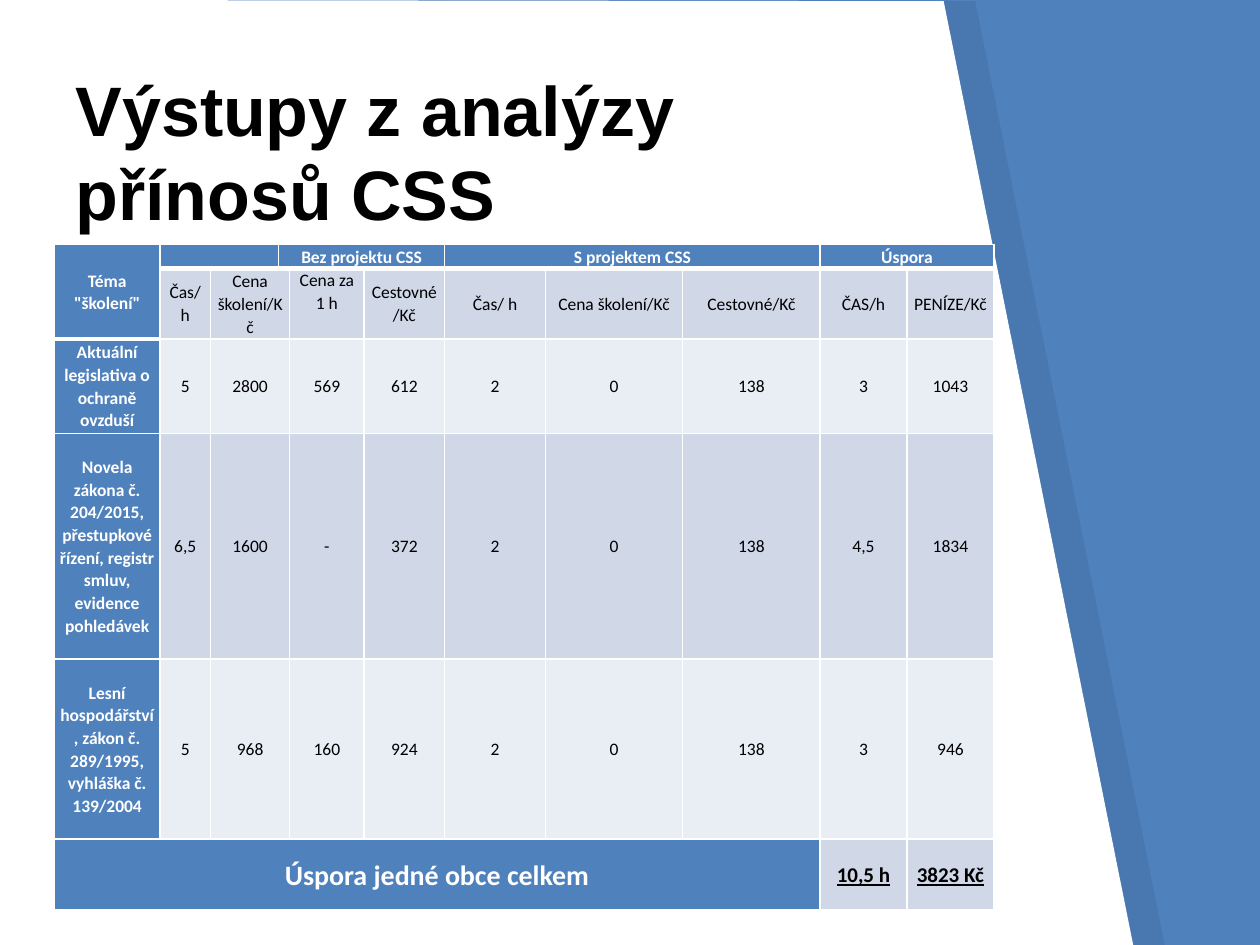
from lxml.etree import SubElement
from pptx import Presentation
from pptx.dml.color import RGBColor
from pptx.enum.text import MSO_ANCHOR, MSO_AUTO_SIZE, PP_ALIGN
from pptx.oxml.ns import qn
from pptx.util import Inches, Pt

HUES = {"blue": "4F81BD", "white": "FFFFFF", "black": "000000",
        "dark": "D0D8E8", "light": "E9EDF4"}
COLS = [0.84, 0.4, 0.54, 0.09, 0.59, 0.64, 0.8, 1.09, 1.09, 0.69, 0.69]
ROWS = [0.19, 0.56, 0.75, 1.79, 1.43, 0.56]
LAST = len(ROWS) - 1
SPANS = [(0, 0, 1, 0), (0, 1, 0, 2), (0, 3, 0, 5), (0, 6, 0, 8),
         (0, 9, 0, 10), (LAST, 0, LAST, 8)]
SPANS += [(row, 2, row, 3) for row in range(1, LAST)]
HEADS = {(0, 0): 'Téma "školení"', (0, 3): "Bez projektu CSS",
         (0, 6): "S projektem CSS", (0, 9): "Úspora",
         (LAST, 0): "Úspora jedné obce celkem",
         (LAST, 9): "10,5 h", (LAST, 10): "3823 Kč"}
FIELDS = [1, 2, 4, 5, 6, 7, 8, 9, 10]
BODY = [
    ["Čas/ h", "Cena školení/Kč", "Cena za 1 h", "Cestovné/Kč", "Čas/ h",
     "Cena školení/Kč", "Cestovné/Kč", "ČAS/h", "PENÍZE/Kč"],
    ["5", "2800", "569", "612", "2", "0", "138", "3", "1043"],
    ["6,5", "1600", "-", "372", "2", "0", "138", "4,5", "1834"],
    ["5", "968", "160", "924", "2", "0", "138", "3", "946"],
]
TOPICS = [
    "Aktuální legislativa o ochraně ovzduší",
    "Novela zákona č. 204/2015, přestupkové řízení, registr smluv, "
    "evidence pohledávek",
    "Lesní hospodářství, zákon č. 289/1995, vyhláška č. 139/2004",
]


def tint(name):
    return RGBColor.from_string(HUES[name])


def style(para, face, size, hue, bold, line=False):
    font = para.font
    font.name, font.size, font.bold = face, Pt(size), bold
    font.color.rgb = tint(hue)
    if line:
        font.underline = True


def add_panel(slide, left, hue, alpha=None):
    """Add a slanted panel behind everything drawn after it."""
    spots = [(0, 7.53), (9, 7.53), (7.49, 0.01)]
    maker = slide.shapes.build_freeform(Inches(left), 0)
    maker.add_line_segments([(Inches(left + x), Inches(y)) for x, y in spots])
    panel = maker.convert_to_shape()
    panel.shadow.inherit = False
    panel.line.fill.background()
    panel.fill.solid()
    panel.fill.fore_color.rgb = tint(hue)
    if alpha:
        color = next(panel.element.iter(qn("a:srgbClr")))
        SubElement(color, qn("a:alpha"), val=str(alpha * 1000))


def set_title(slide, text):
    title = slide.shapes.title
    slide.shapes.element.append(title.element)
    title.left, title.top = Inches(0.5), Inches(0.84)
    title.width, title.height = Inches(7.1), Inches(0.71)
    frame = title.text_frame
    frame.text = text
    frame.word_wrap = True
    frame.auto_size = MSO_AUTO_SIZE.NONE
    frame.vertical_anchor = MSO_ANCHOR.MIDDLE
    para = frame.paragraphs[0]
    para.alignment = PP_ALIGN.LEFT
    style(para, "Arial", 40, "black", True)


def add_edges(cell, sides):
    props = cell._tc.get_or_add_tcPr()
    for side, width in sides.items():
        edge = SubElement(props, qn("a:ln" + side), w=str(Pt(width)))
        fill = SubElement(edge, qn("a:solidFill"))
        SubElement(fill, qn("a:srgbClr"), val=HUES["white"])


def format_cell(cell, row, col, text):
    head = row == 0 or col == 0 or (row == LAST and col < 9)
    total = row == LAST
    sides = {"L": 1, "R": 1}
    if row == 0:
        sides["T"] = 1
    sides["B"] = 3 if row == 0 or (row, col) == (1, 0) else 1
    add_edges(cell, sides)
    cell.fill.solid()
    shade = "dark" if row % 2 else "light"
    cell.fill.fore_color.rgb = tint("blue" if head else shade)
    cell.margin_left = cell.margin_right = Inches(0.04)
    cell.margin_top = cell.margin_bottom = 0
    top = (row, col) == (1, 4)
    cell.vertical_anchor = MSO_ANCHOR.TOP if top else MSO_ANCHOR.MIDDLE
    cell.text_frame.text = text
    para = cell.text_frame.paragraphs[0]
    para.alignment, para.line_spacing = PP_ALIGN.CENTER, 1.07
    size = (16 if head else 12) if total else 10
    style(para, "Calibri", size, "white" if head else "black",
          head or total, total and not head)
    if not text:
        SubElement(para._p, qn("a:endParaRPr"), sz="1000")


def add_grid(slide):
    words = dict(HEADS)
    for row, vals in enumerate(BODY, 1):
        words.update({(row, col): val for col, val in zip(FIELDS, vals)})
    words.update({(row, 0): text for row, text in enumerate(TOPICS, 2)})
    table = slide.shapes.add_table(
        len(ROWS), len(COLS), Inches(0.43), Inches(1.94),
        Inches(sum(COLS)), Inches(sum(ROWS))).table
    table.horz_banding = False
    for col, width in enumerate(COLS):
        table.columns[col].width = Inches(width)
    for row, height in enumerate(ROWS):
        table.rows[row].height = Inches(height)
        for col in range(len(COLS)):
            format_cell(table.cell(row, col), row, col,
                        words.get((row, col), ""))
    for top, left, low, right in SPANS:
        table.cell(top, left).merge(table.cell(low, right))


def main():
    deck = Presentation()
    deck.slide_width, deck.slide_height = Inches(10), Inches(7.5)
    slide = deck.slides.add_slide(deck.slide_layouts[5])
    slide.background.fill.solid()
    slide.background.fill.fore_color.rgb = tint("blue")
    add_panel(slide, 0.25, "black", 7)
    add_panel(slide, 0, "white")
    set_title(slide, "Výstupy z analýzy přínosů CSS")
    add_grid(slide)
    deck.save("out.pptx")


if __name__ == "__main__":
    main()
